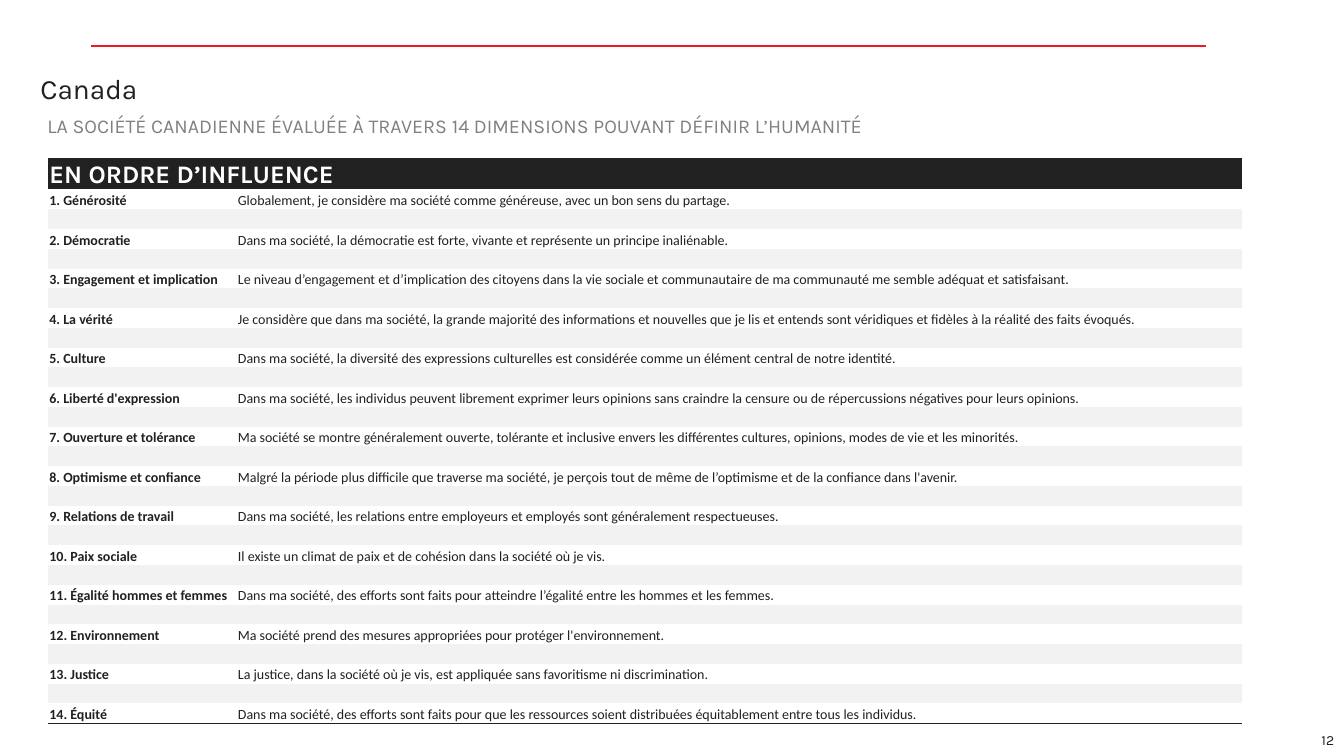
import pptx
import pptx.dml.color
import pptx.enum.shapes
import pptx.enum.text
import pptx.oxml.ns
import pptx.util
from lxml import etree

INK, PAPER, RED, GREY, BAND = "212121", "FFFFFF", "ED1C24", "808080", "F2F2F2"
ANCHOR = pptx.enum.text.MSO_ANCHOR
ALIGN = pptx.enum.text.PP_ALIGN

DIMENSIONS = [
    ("Générosité", "Globalement, je considère ma société comme généreuse, avec un bon sens du partage."),
    ("Démocratie", "Dans ma société, la démocratie est forte, vivante et représente un principe inaliénable."),
    ("Engagement et implication", "Le niveau d’engagement et d’implication des citoyens dans la vie sociale et communautaire de ma communauté me semble adéquat et satisfaisant."),
    ("La vérité", "Je considère que dans ma société, la grande majorité des informations et nouvelles que je lis et entends sont véridiques et fidèles à la réalité des faits évoqués."),
    ("Culture", "Dans ma société, la diversité des expressions culturelles est considérée comme un élément central de notre identité."),
    ("Liberté d'expression", "Dans ma société, les individus peuvent librement exprimer leurs opinions sans craindre la censure ou de répercussions négatives pour leurs opinions."),
    ("Ouverture et tolérance", "Ma société se montre généralement ouverte, tolérante et inclusive envers les différentes cultures, opinions, modes de vie et les minorités."),
    ("Optimisme et confiance", "Malgré la période plus difficile que traverse ma société, je perçois tout de même de l’optimisme et de la confiance dans l'avenir."),
    ("Relations de travail", "Dans ma société, les relations entre employeurs et employés sont généralement respectueuses."),
    ("Paix sociale", "Il existe un climat de paix et de cohésion dans la société où je vis."),
    ("Égalité hommes et femmes", "Dans ma société, des efforts sont faits pour atteindre l’égalité entre les hommes et les femmes."),
    ("Environnement", "Ma société prend des mesures appropriées pour protéger l'environnement."),
    ("Justice", "La justice, dans la société où je vis, est appliquée sans favoritisme ni discrimination."),
    ("Équité", "Dans ma société, des efforts sont faits pour que les ressources soient distribuées équitablement entre tous les individus."),
]


def colour(hex_value):
    return pptx.dml.color.RGBColor.from_string(hex_value)


def add_element(parent, tag, **attributes):
    return etree.SubElement(parent, pptx.oxml.ns.qn(tag), **attributes)


class Page:
    heading_font, table_font = "Karla", "Calibri"

    def __init__(self, deck):
        self.width, self.height = deck.slide_width, deck.slide_height
        self.slide = deck.slides.add_slide(deck.slide_layouts[1])
        self.shapes = self.slide.shapes

    def x(self, percent):
        return round(self.width * percent / 100)

    def y(self, percent):
        return round(self.height * percent / 100)

    def box(self, left, top, width, height):
        return self.x(left), self.y(top), self.x(width), self.y(height)

    def run(self, paragraph, words, size, ink, font=heading_font, bold=False):
        run = paragraph.add_run()
        run.text = words
        run.font.size = pptx.util.Pt(size)
        run.font.name = font
        run.font.bold = bold
        run.font.color.rgb = colour(ink)

    def rule(self, left, right, level):
        rule = self.shapes.add_connector(
            pptx.enum.shapes.MSO_CONNECTOR.STRAIGHT,
            self.x(left), self.y(level), self.x(right), self.y(level))
        rule.line.color.rgb = colour(RED)
        rule.line.width = pptx.util.Pt(1.5)
        add_element(rule._element.spPr, "a:effectLst")

    def heading(self, index, area, words, size, ink, spacing):
        heading = self.slide.placeholders[index]
        heading.left, heading.top, heading.width, heading.height = self.box(*area)
        frame = heading.text_frame
        frame.auto_size = pptx.enum.text.MSO_AUTO_SIZE.NONE
        frame.vertical_anchor = ANCHOR.TOP
        paragraph = frame.paragraphs[0]
        paragraph.alignment = ALIGN.LEFT
        paragraph.line_spacing = spacing
        paragraph.space_before = pptx.util.Pt(10)
        properties = paragraph._p.get_or_add_pPr()
        properties.set("marL", "0")
        properties.set("indent", "0")
        add_element(properties, "a:buNone")
        self.run(paragraph, words, size, ink)

    def page_number(self, area, words):
        frame = self.shapes.add_textbox(*self.box(*area)).text_frame
        frame.word_wrap = True
        frame.vertical_anchor = ANCHOR.MIDDLE
        frame.paragraphs[0].alignment = ALIGN.RIGHT
        self.run(frame.paragraphs[0], words, 10, INK)

    def cell(self, cell, fill=None, words="", **style):
        cell.margin_left = cell.margin_right = cell.margin_top = pptx.util.Inches(0.01)
        cell.margin_bottom = 0
        cell.vertical_anchor = ANCHOR.BOTTOM
        if fill:
            cell.fill.solid()
            cell.fill.fore_color.rgb = colour(fill)
        else:
            cell.fill.background()
        paragraph = cell.text_frame.paragraphs[0]
        if words:
            self.run(paragraph, words, **style)
        else:
            add_element(paragraph._p, "a:endParaRPr", sz="1000")

    def underline(self, cell):
        border = etree.Element(pptx.oxml.ns.qn("a:lnB"), w=str(pptx.util.Pt(1)))
        add_element(add_element(border, "a:solidFill"), "a:srgbClr", val=INK)
        cell._tc.get_or_add_tcPr().insert(0, border)

    def ranking(self, area, name_share, header_share, header, entries):
        row_count = 2 * len(entries)
        table = self.shapes.add_table(row_count, 2, *self.box(*area)).table
        table.first_row = table.horz_banding = False
        style_id = table._tbl.tblPr.find(pptx.oxml.ns.qn("a:tableStyleId"))
        style_id.text = "{2D5ABB26-0587-4C30-8999-92F81FD0307C}"
        table.columns[0].width = self.x(name_share)
        table.columns[1].width = self.x(area[2] - name_share)
        for row in table.rows:
            row.height = self.y((area[3] - header_share) / (row_count - 1))
        table.rows[0].height = self.y(header_share)
        table.cell(0, 0).merge(table.cell(0, 1))
        self.cell(table.cell(0, 0), INK, header, size=18, ink=PAPER, bold=True)
        for rank, (name, statement) in enumerate(entries, 1):
            row = 2 * rank - 1
            for column, words in enumerate((f"{rank}. {name}", statement)):
                self.cell(table.cell(row, column), None, words, size=10, ink=INK,
                          font=self.table_font, bold=column == 0)
                if rank < len(entries):
                    self.cell(table.cell(row + 1, column), BAND)
                else:
                    self.underline(table.cell(row, column))


def main():
    deck = pptx.Presentation()
    deck.slide_width = pptx.util.Inches(13.33)
    deck.slide_height = pptx.util.Inches(7.5)
    page = Page(deck)
    page.rule(6.75, 89.72, 6.13)
    page.page_number((90.7, 95.73, 9.3, 4.27), "12")
    page.heading(0, (2.25, 9.6, 71.72, 5.2), "Canada", 20, INK, 0.8)
    page.heading(1, (2.78, 14.8, 79.52, 5.2),
                 "LA SOCIÉTÉ CANADIENNE ÉVALUÉE À TRAVERS 14 DIMENSIONS POUVANT DÉFINIR L’HUMANITÉ",
                 14, GREY, 0.9)
    page.ranking((3.6, 20.93, 88.82, 74.7), 14.03, 4.07, "EN ORDRE D’INFLUENCE", DIMENSIONS)
    deck.save("out.pptx")


if __name__ == "__main__":
    main()
